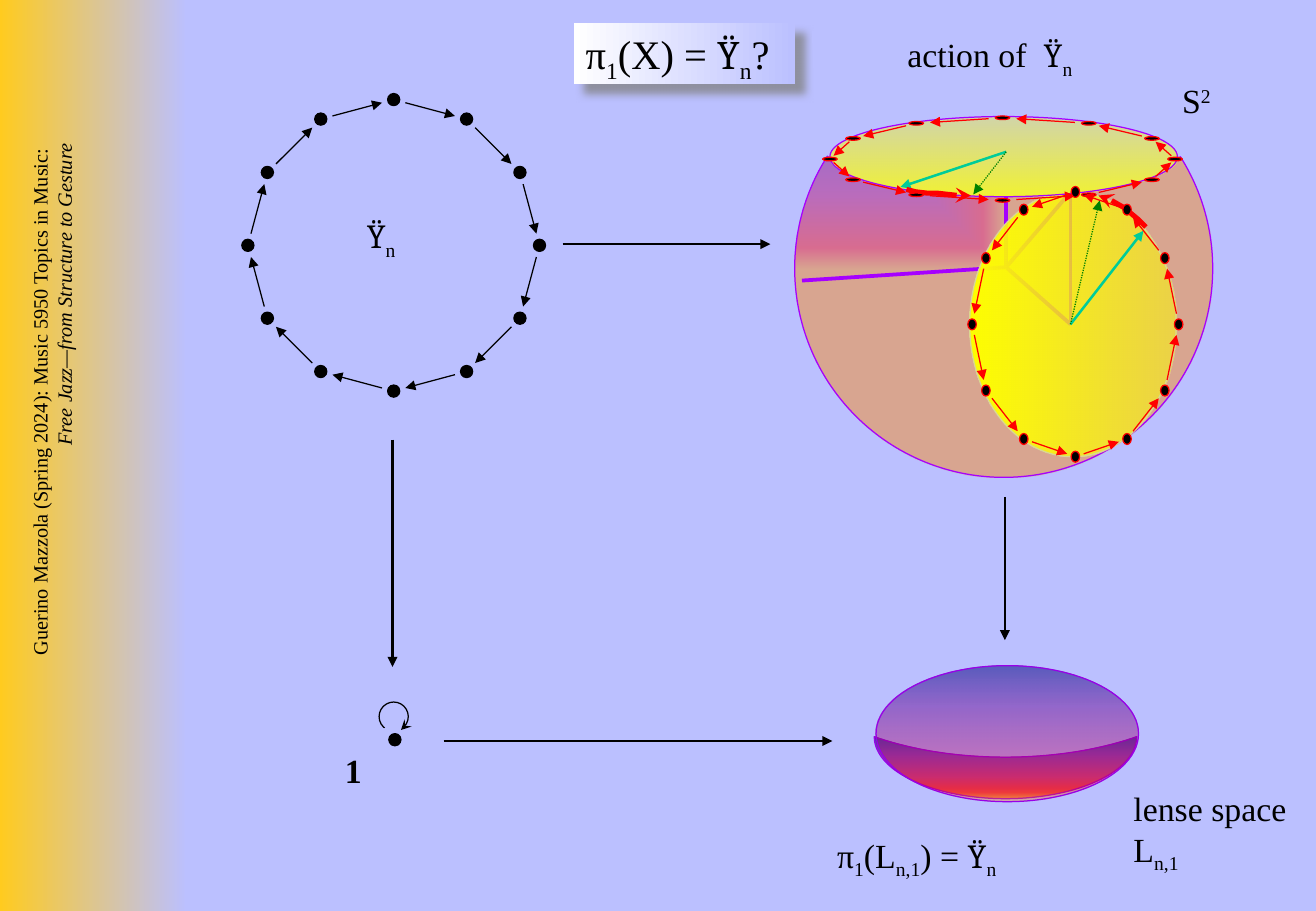
from collections import namedtuple
from itertools import chain
from math import cos, radians, sin

from lxml import etree
from pptx import Presentation
from pptx.dml.color import RGBColor as RGB
from pptx.enum.dml import MSO_LINE as DASH
from pptx.enum.shapes import MSO_CONNECTOR as LINK, MSO_SHAPE as FORM
from pptx.enum.text import MSO_ANCHOR as ANCHOR, MSO_AUTO_SIZE as FIT, PP_ALIGN as ALIGN
from pptx.oxml import parse_xml
from pptx.oxml.ns import nsdecls, qn
from pptx.util import Emu, Pt

SCALE = 9144  # EMU per px, 100 px to the inch
ORDER = 12  # dots on every ring
GAP = 0.16  # share of a step left free at each end of a ring arrow
SKY, WHITE, BLACK, GOLD = "BBC0FF", "FFFFFF", "000000", "FFCB1F"
RED, PURPLE, VIOLET = "FF0000", "A600FF", "9800E8"
TEAL, GREEN, YELLOW, SAND, GREY = "00CC99", "008000", "FFFF00", "D8D892", "808080"
BLAZE = [(0, "000082"), (30, "66008F"), (65, "BA0066"), (90, RED), (100, "FF8200")]
ROMAN, SERIF = "Times New Roman", "Cambria"

Oval = namedtuple("Oval", "x y rx ry")  # centre and radii
RING = Oval(324, 202, 120, 120)
BALL = Oval(826, 221, 172, 172)
LID = Oval(826, 129, 143, 33)
LID_RING = Oval(825, 131, 142, 34)
DISC = Oval(883, 267, 85, 109)
DISC_RING = Oval(885, 267, 85, 109)
LENS = Oval(829, 604, 108, 56)
LOOP = Oval(324, 590, 12, 12)

CORE, LID_HUB, DISC_HUB = (828, 220), (828, 125), (881, 267)
DISC_TOP, WEST = (881, 158), (660, 231)

Run = namedtuple("Run", "text face shift", defaults=(ROMAN, 0))


def sub(text):
    return Run(text, shift=-25)


GROUP = [Run("Ÿ", SERIF), sub("n")]
PI = [Run("π"), sub("1")]


def px(n):
    return Emu(int(n * SCALE))


def hue(code):
    return RGB.from_string(code)


def spot(oval, angle):
    """Point of the oval at an angle in degrees, clockwise from the right."""
    turn = radians(angle)
    return oval.x + oval.rx * cos(turn), oval.y + oval.ry * sin(turn)


def arc(oval, start, end, steps):
    return [spot(oval, start + (end - start) * i / steps) for i in range(steps + 1)]


def fade(shape, stops, angle=None):
    """Gradient of (place, colour, opacity) stops; no angle means from the far corner."""
    gs = "".join(
        f'<a:gs pos="{at * 1000}"><a:srgbClr val="{code}"><a:alpha val="{clear * 1000}"/>'
        f'</a:srgbClr></a:gs>' for at, code, clear in stops)
    way = (f'<a:lin ang="{angle * 60000}" scaled="1"/>' if angle is not None else
           '<a:path path="rect"><a:fillToRect r="100000" b="100000"/></a:path>')
    shape.fill.solid()
    old = shape._element.spPr.find(qn("a:solidFill"))
    old.getparent().replace(old, parse_xml(
        f'<a:gradFill {nsdecls("a")} rotWithShape="0"><a:gsLst>{gs}</a:gsLst>{way}</a:gradFill>'))


def paint(shape, fill=None, line=None, width=0.75):
    shape.shadow.inherit = False
    if fill:
        shape.fill.solid()
        shape.fill.fore_color.rgb = hue(fill)
    else:
        shape.fill.background()
    if line:
        shape.line.color.rgb = hue(line)
        shape.line.width = Pt(width)
    else:
        shape.line.fill.background()
    return shape


def form(slide, kind, box, fill=None, line=None):
    return paint(slide.shapes.add_shape(kind, *map(px, box)), fill, line)


def draw(slide, oval, fill=None, line=None):
    x, y, rx, ry = oval
    return form(slide, FORM.OVAL, (x - rx, y - ry, 2 * rx, 2 * ry), fill, line)


def tip(shape, kind):
    etree.SubElement(shape.line._get_or_add_ln(), qn("a:tailEnd"), type=kind)


def rule(slide, start, end, color, width=0.75, head="triangle", dash=None):
    """Straight line, with an arrowhead at its end unless head is None."""
    line = slide.shapes.add_connector(LINK.STRAIGHT, *map(px, (*start, *end)))
    line.line.color.rgb = hue(color)
    line.line.width = Pt(width)
    if dash:
        line.line.dash_style = dash
    if head:
        tip(line, head)
    etree.SubElement(line._element.spPr, qn("a:effectLst"))


def trace(slide, points, closed):
    first, *rest = [(round(x), round(y)) for x, y in points]
    pen = slide.shapes.build_freeform(*first, scale=SCALE)
    pen.add_line_segments(rest, close=closed)
    return pen.convert_to_shape()


def sweep(slide, oval, start, end):
    """Thick arrow along part of an oval."""
    bow = paint(trace(slide, arc(oval, start, end, 6), False), line=RED, width=3)
    tip(bow, "stealth")


def cycle(slide, oval, rx, ry, line, turn):
    """Ring of dots joined by arrows; turn is 1 for clockwise, -1 for the other way."""
    spots = arc(oval, 0, 360 * turn, ORDER)
    for (x1, y1), (x2, y2) in zip(spots, spots[1:]):
        dx, dy = GAP * (x2 - x1), GAP * (y2 - y1)
        rule(slide, (x1 + dx, y1 + dy), (x2 - dx, y2 - dy), line)
    for x, y in spots[:ORDER]:
        draw(slide, Oval(x, y, rx, ry), BLACK, line)


def write(frame, lines, size=20, align=ALIGN.LEFT, bold=False, slant=()):
    """Lines of runs in one paragraph; slant holds the numbers of italic lines."""
    para = frame.paragraphs[0]
    para.alignment = align
    for i, runs in enumerate(lines):
        if i:
            para.add_line_break()
        for text, face, shift in runs:
            run = para.add_run()
            run.text = text
            font = run.font
            font.name, font.size, font.bold = face, Pt(size), bold
            font.italic = i in slant
            font.color.rgb = hue(BLACK)
            if shift:
                run._r.get_or_add_rPr().set("baseline", str(shift * 1000))


def label(slide, box, *lines, bold=False):
    frame = slide.shapes.add_textbox(*map(px, box)).text_frame
    frame.word_wrap = False
    frame.auto_size = FIT.SHAPE_TO_FIT_TEXT
    write(frame, lines, bold=bold)


def side(slide):
    band = form(slide, FORM.RECTANGLE, (0, 0, 154, 750))
    fade(band, [(0, GOLD, 100), (100, SKY, 100)], 0)
    note = slide.shapes.add_textbox(*map(px, (-240, 366, 565, 50)))
    note.rotation = 270
    note.text_frame.word_wrap = True
    course = Run("Guerino Mazzola (Spring 2024): Music 5950 Topics in Music: ")
    topic = Run("Free Jazz—from Structure to Gesture")
    write(note.text_frame, [[course], [topic]], 12, ALIGN.RIGHT, slant=(1,))


def head(slide):
    title = slide.shapes.title
    title.left, title.top, title.width, title.height = map(px, (472, 19, 182, 50))
    fade(title, [(0, WHITE, 100), (100, SKY, 100)], 0)
    title._element.spPr.append(parse_xml(
        f'<a:effectLst {nsdecls("a")}><a:outerShdw blurRad="{Pt(5)}" dist="{Pt(8.5)}" '
        f'dir="2700000" algn="ctr" rotWithShape="0"><a:srgbClr val="{GREY}">'
        '<a:alpha val="75000"/></a:srgbClr></a:outerShdw></a:effectLst>'))
    frame = title.text_frame
    frame.word_wrap, frame.auto_size = False, FIT.NONE
    frame.vertical_anchor = ANCHOR.TOP
    write(frame, [[*PI, Run("(X) = "), *GROUP, Run("?")]], 24)


def sphere(slide):
    fade(draw(slide, BALL, line=PURPLE), [(*stop, 43) for stop in BLAZE])
    spokes = [(CORE, end) for end in (DISC_TOP, DISC_HUB, WEST, LID_HUB)]
    for start, end in chain(spokes, [(DISC_TOP, DISC_HUB), (LID_HUB, DISC_TOP)]):
        rule(slide, start, end, PURPLE, 2.25, head=None)
    fade(draw(slide, DISC, line=SAND), [(0, YELLOW, 100), (100, YELLOW, 50)], 0)
    cap = [(672, 124), *arc(LID, 180, 0, 18), (989, 126), (985, 25), (668, 25)]
    paint(trace(slide, cap, True), SKY)
    fade(draw(slide, LID, line=PURPLE), [(0, YELLOW, 33), (100, YELLOW, 81)], 90)
    for hub, old, new in ((DISC_HUB, (941, 190), (905, 165)), (LID_HUB, (741, 154), (801, 160))):
        rule(slide, hub, old, TEAL, 1.5)
        rule(slide, hub, new, GREEN, dash=DASH.ROUND_DOT)
    sweep(slide, LID, 124, 101)
    sweep(slide, DISC_RING, -47, -77)
    cycle(slide, LID_RING, 6, 1.5, RED, -1)
    cycle(slide, DISC_RING, 3.5, 4.5, RED, -1)
    label(slide, (963, 61, 45, 44), [Run("S"), Run("2", shift=30)])
    label(slide, (737, 23, 163, 44), [Run("action of  "), *GROUP])


def lens(slide):
    moon = form(slide, FORM.MOON, (802, 524, 51, 216), line=VIOLET)
    moon.rotation = 270
    moon.adjustments[0] = 0.67
    fade(moon, [(*stop, 63) for stop in BLAZE], 90)
    clears = (52, 46, 40, 35, 33)
    fade(draw(slide, LENS, line=VIOLET), [(*s, c) for s, c in zip(BLAZE, clears)], 90)
    space = [Run("L"), sub("n,1")]
    label(slide, (923, 644, 147, 77), [Run("lense space")], space)
    label(slide, (679, 682, 165, 44), [*PI, Run("("), *space, Run(") = "), *GROUP])


def ring(slide):
    label(slide, (292, 172, 51, 44), GROUP)
    cycle(slide, RING, 5, 5, BLACK, 1)


def loop(slide):
    draw(slide, LOOP, line=BLACK)
    form(slide, FORM.RECTANGLE, (318, 593, 15, 15), SKY).rotation = 311.2
    rule(slide, (335, 596), (330, 601), BLACK, head="stealth")
    draw(slide, Oval(325, 609, 5, 5), BLACK, BLACK)
    label(slide, (274, 612, 34, 43), [Run("1")], bold=True)


def maps(slide):
    """Four arrows of the square between ring, sphere, loop and lens."""
    for y, left, right in ((201, 463, 634), (610, 365, 685)):
        rule(slide, (left, y), (right, y), BLACK, 1.5)
    for x, top, foot in ((323, 362, 549), (827, 409, 527)):
        rule(slide, (x, top), (x, foot), BLACK, 1.5)


def main():
    deck = Presentation()
    deck.slide_width, deck.slide_height = px(1083), px(750)
    slide = deck.slides.add_slide(deck.slide_layouts[5])
    slide.background.fill.solid()
    slide.background.fill.fore_color.rgb = hue(SKY)
    for part in (side, head, sphere, lens, ring, loop, maps):
        part(slide)
    deck.save("out.pptx")


if __name__ == "__main__":
    main()
